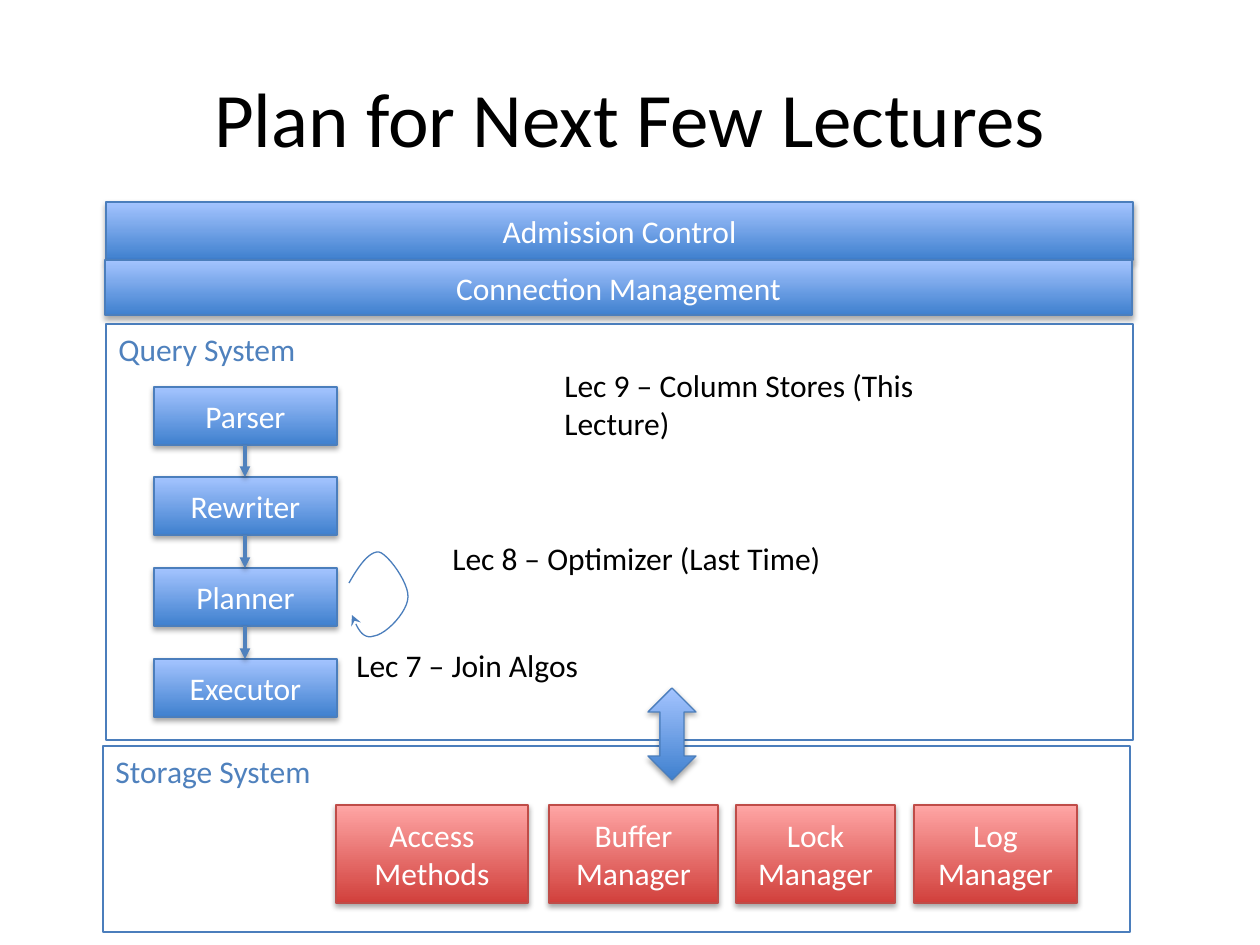
from dataclasses import dataclass
from itertools import pairwise

from lxml.etree import SubElement
from pptx import Presentation
from pptx.dml.color import RGBColor
from pptx.enum.shapes import MSO_CONNECTOR, MSO_SHAPE
from pptx.enum.text import MSO_ANCHOR, MSO_AUTO_SIZE, PP_ALIGN
from pptx.oxml.ns import qn
from pptx.util import Pt

PX = 914400 / 126
FONT = "Calibri"
HUES = {
    "black": "000000",
    "white": "FFFFFF",
    "label": "4F81BD",
    "blue_low": "3F80CE",
    "blue_top": "A4C4FF",
    "blue_line": "4B7EBC",
    "red_low": "D1403C",
    "red_top": "FFA6A5",
    "red_line": "BF4C48",
}


@dataclass
class Box:
    text: str
    x: int
    y: int
    w: int
    h: int
    hue: str = "blue"
    form: MSO_SHAPE = MSO_SHAPE.RECTANGLE


@dataclass
class Note:
    text: str
    x: int
    y: int
    w: int
    h: int
    wrap: bool = True
    align: PP_ALIGN = PP_ALIGN.LEFT


def emu(*sizes: float) -> list[int]:
    return [round(size * PX) for size in sizes]


def tint(name: str) -> RGBColor:
    return RGBColor.from_string(HUES[name])


def write(frame, text: str, hue: str, align: PP_ALIGN, size: int = 18) -> None:
    line = frame.paragraphs[0]
    line.alignment = align
    run = line.add_run()
    run.text = text
    run.font.name = FONT
    run.font.size = Pt(size)
    run.font.color.rgb = tint(hue)


def shade(shape, dist: int, alpha: int) -> None:
    props = shape._element.spPr
    list_ = SubElement(props, qn("a:effectLst"))
    drop = SubElement(list_, qn("a:outerShdw"), blurRad="40000", dist=str(dist),
                      dir="5400000", rotWithShape="0")
    color = SubElement(drop, qn("a:srgbClr"), val=HUES["black"])
    SubElement(color, qn("a:alpha"), val=str(alpha * 1000))


def point(shape, kind: str) -> None:
    SubElement(shape.line._get_or_add_ln(), qn("a:tailEnd"), type=kind)


def edge(shape, hue: str, width: float = 0.75) -> None:
    shape.line.color.rgb = tint(hue)
    shape.line.width = Pt(width)


def draw_box(slide, box: Box) -> None:
    shape = slide.shapes.add_shape(box.form, *emu(box.x, box.y, box.w, box.h))
    shape.fill.gradient()
    shape.fill.gradient_angle = 90
    for stop, end in zip(shape.fill.gradient_stops, ("low", "top")):
        stop.color.rgb = tint(f"{box.hue}_{end}")
    edge(shape, f"{box.hue}_line")
    shade(shape, 23000, 35)
    if box.text:
        frame = shape.text_frame
        frame.word_wrap = True
        frame.vertical_anchor = MSO_ANCHOR.MIDDLE
        write(frame, box.text, "white", PP_ALIGN.CENTER)


def draw_panel(slide, box: Box) -> None:
    shape = slide.shapes.add_shape(box.form, *emu(box.x, box.y, box.w, box.h))
    shape.fill.background()
    shape.shadow.inherit = False
    edge(shape, "blue_line")
    shape.text_frame.vertical_anchor = MSO_ANCHOR.TOP
    write(shape.text_frame, box.text, "label", PP_ALIGN.LEFT)


def draw_note(slide, note: Note) -> None:
    shape = slide.shapes.add_textbox(*emu(note.x, note.y, note.w, note.h))
    frame = shape.text_frame
    frame.word_wrap = note.wrap
    frame.auto_size = MSO_AUTO_SIZE.SHAPE_TO_FIT_TEXT
    write(frame, note.text, "black", note.align)


def draw_link(slide, top: Box, low: Box) -> None:
    x = top.x + top.w // 2
    link = slide.shapes.add_connector(
        MSO_CONNECTOR.STRAIGHT, *emu(x, top.y + top.h, x, low.y))
    edge(link, "label", 2)
    point(link, "triangle")
    shade(link, 20000, 38)


def trace(knots: list[tuple[int, int]], steps: int = 12) -> list[tuple[int, int]]:
    spots = [knots[0]]
    for i in range(0, len(knots) - 1, 3):
        for n in range(1, steps + 1):
            t = n / steps
            parts = ((1 - t) ** 3, 3 * t * (1 - t) ** 2, 3 * t * t * (1 - t), t ** 3)
            spots.append(tuple(sum(p * k[axis] for p, k in zip(parts, knots[i:i + 4]))
                               for axis in (0, 1)))
    return [tuple(emu(*spot)) for spot in spots]


def draw_loop(slide, knots: list[tuple[int, int]]) -> None:
    first, *rest = trace(knots)
    pen = slide.shapes.build_freeform(*first)
    pen.add_line_segments(rest, close=False)
    loop = pen.convert_to_shape()
    loop.fill.background()
    loop.shadow.inherit = False
    edge(loop, "blue_line")
    point(loop, "stealth")


BARS = [
    Box("Admission Control", 106, 202, 1027, 58),
    Box("Connection Management", 105, 260, 1027, 55),
]
PANELS = [
    Box("Query System", 106, 324, 1027, 416),
    Box("Storage System", 103, 746, 1027, 186),
]
STAGES = [
    Box(name, 154, 387 + i * 272 // 3, 183, 58)
    for i, name in enumerate(("Parser", "Rewriter", "Planner", "Executor"))
]
STORES = [
    Box(f"{name}", x, 805, w, 98, "red")
    for name, x, w in (
        ("Access Methods", 336, 192),
        ("Buffer Manager", 549, 169),
        ("Lock Manager", 736, 159),
        ("Log Manager", 914, 163),
    )
]
BRIDGE = Box("", 648, 688, 48, 92, form=MSO_SHAPE.UP_DOWN_ARROW)
LOOP = [
    (349, 583), (358, 567), (369, 551), (379, 552),
    (388, 554), (409, 583), (408, 597),
    (408, 611), (387, 634), (374, 636),
    (362, 640), (357, 627), (352, 615),
]
NOTES = [
    Note("– Optimizer (Last Time)", 510, 533, 325, 50, False, PP_ALIGN.CENTER),
    Note("Lec 8", 440, 533, 123, 50),
    Note("Lec 9 – Column Stores (This Lecture)", 552, 360, 379, 89),
    Note("Lec 7 – Join Algos", 344, 640, 249, 50, False),
]


def main() -> None:
    deck = Presentation()
    deck.slide_width, deck.slide_height = emu(1260, 945)
    slide = deck.slides.add_slide(deck.slide_layouts[5])
    title = slide.shapes.title
    title.left, title.top, title.width, title.height = emu(63, 38, 1134, 157)
    title.text_frame.vertical_anchor = MSO_ANCHOR.MIDDLE
    write(title.text_frame, "Plan for Next Few Lectures", "black", PP_ALIGN.CENTER, 44)
    for bar in BARS:
        draw_box(slide, bar)
    for panel in PANELS:
        draw_panel(slide, panel)
    for stage in STAGES:
        draw_box(slide, stage)
    for top, low in pairwise(STAGES):
        draw_link(slide, top, low)
    draw_loop(slide, LOOP)
    for box in (*STORES, BRIDGE):
        draw_box(slide, box)
    for note in NOTES:
        draw_note(slide, note)
    deck.save("out.pptx")


if __name__ == "__main__":
    main()
